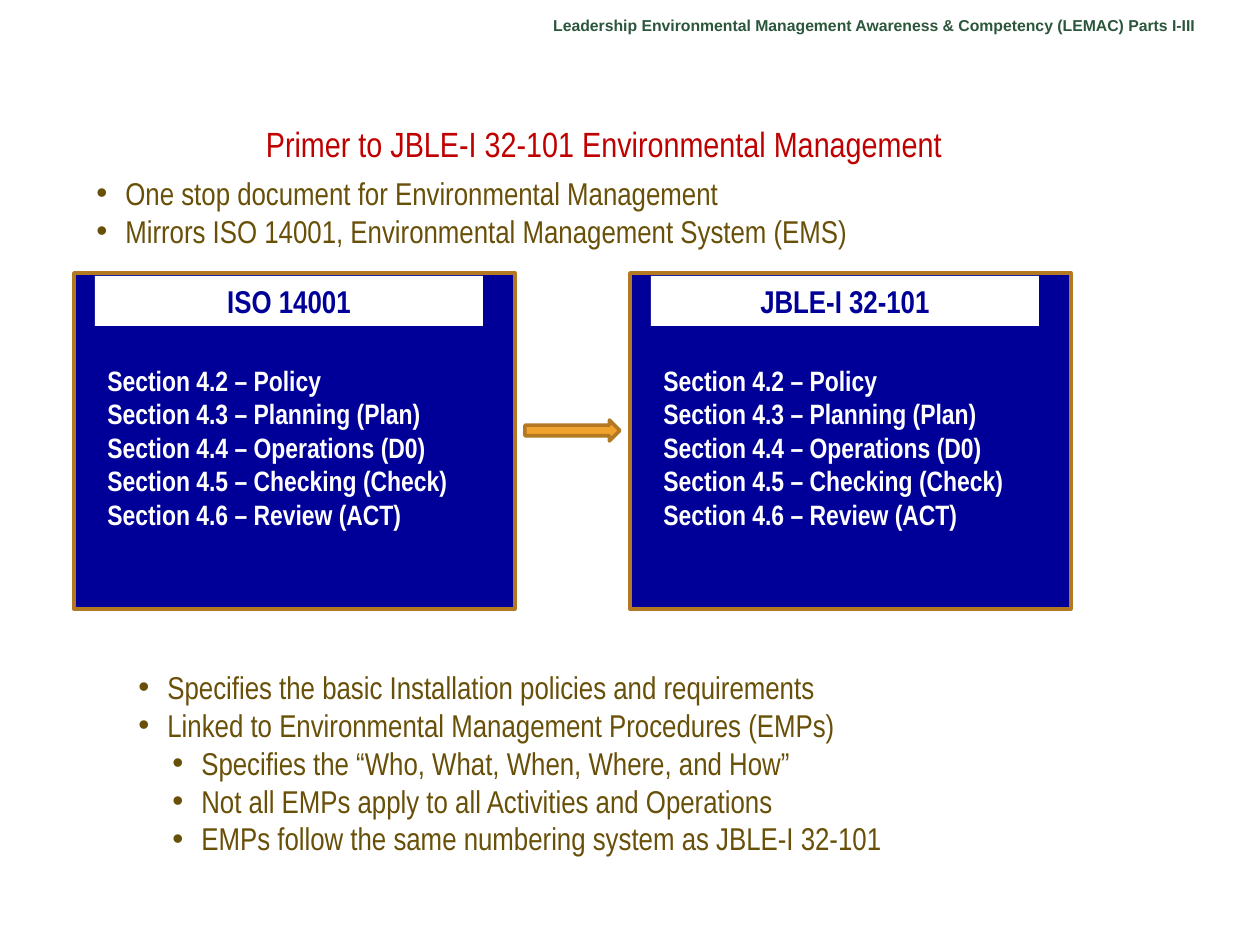
import pptx
import pptx.util
import pptx.dml.color
import pptx.enum.shapes
import pptx.enum.text
import pptx.oxml.ns
import lxml.etree

PX = 914400 / 126
COLORS = {
    "header": "2C563C",
    "title": "C00000",
    "bullet": "695008",
    "panel": "000099",
    "border": "B27822",
    "arrow": "F0A22E",
    "white": "FFFFFF",
}
SHAPES = pptx.enum.shapes.MSO_SHAPE
ALIGN = pptx.enum.text.PP_ALIGN

deck = pptx.Presentation()
deck.slide_width = round(1260 * PX)
deck.slide_height = round(945 * PX)
page = deck.slides.add_slide(deck.slide_layouts[6])


def add_shape(kind, place, fill, border=None):
    shape = page.shapes.add_shape(kind, *[round(v * PX) for v in place])
    shape.shadow.inherit = False
    shape.fill.solid()
    shape.fill.fore_color.rgb = pptx.dml.color.RGBColor.from_string(COLORS[fill])
    if border:
        shape.line.color.rgb = pptx.dml.color.RGBColor.from_string(COLORS[border])
        shape.line.width = pptx.util.Pt(2)
    else:
        shape.line.fill.background()
    return shape


def write(box, lines, size, color, bold=False, align=ALIGN.LEFT, margins=None, font="Arial Narrow"):
    frame = box.text_frame
    frame.word_wrap = True
    frame.vertical_anchor = pptx.enum.text.MSO_ANCHOR.TOP
    frame.text = "\n".join(lines)
    for index, para in enumerate(frame.paragraphs):
        para.alignment = align
        if margins:
            para.level = 1 if margins[index] > 29 else 0
            props = para._p.get_or_add_pPr()
            props.set("marL", str(round(margins[index] * PX)))
            props.set("indent", str(round(-29 * PX)))
            bullet_font = lxml.etree.SubElement(props, pptx.oxml.ns.qn("a:buFont"))
            bullet_font.set("typeface", "Arial")
            bullet = lxml.etree.SubElement(props, pptx.oxml.ns.qn("a:buChar"))
            bullet.set("char", "•")
        for span in para.runs:
            span.font.name = font
            span.font.size = pptx.util.Pt(size)
            span.font.bold = bold
            span.font.color.rgb = pptx.dml.color.RGBColor.from_string(COLORS[color])


header = page.shapes.add_textbox(*[round(v * PX) for v in (472, 10, 735, 32)])
write(header, ["Leadership Environmental Management Awareness & Competency (LEMAC) Parts I-III"],
      9, "header", True, ALIGN.RIGHT, font="Arial")

title = page.shapes.add_textbox(*[round(v * PX) for v in (105, 116, 998, 55)])
write(title, ["Primer to JBLE-I 32-101 Environmental Management"], 20, "title", align=ALIGN.CENTER)

intro = page.shapes.add_textbox(*[round(v * PX) for v in (84, 168, 1071, 89)])
write(intro, [
    "One stop document for Environmental Management",
    "Mirrors ISO 14001, Environmental Management System (EMS)",
], 18, "bullet", margins=[29, 29])

sections = [
    "Section 4.2 – Policy",
    "Section 4.3 – Planning (Plan)",
    "Section 4.4 – Operations (D0)",
    "Section 4.5 – Checking (Check)",
    "Section 4.6 – Review (ACT)",
]
for left, name in ((74, "ISO 14001"), (630, "JBLE-I 32-101")):
    add_shape(SHAPES.RECTANGLE, (left, 273, 441, 336), "panel", "border")
    label = add_shape(SHAPES.RECTANGLE, (left + 21, 276, 388, 50), "white")
    write(label, [name], 18, "panel", True, ALIGN.CENTER)
    section_box = page.shapes.add_textbox(*[round(v * PX) for v in (left + 21, 357, 410, 183)])
    write(section_box, sections, 16, "white", True)

add_shape(SHAPES.RIGHT_ARROW, (525, 420, 95, 21), "arrow", "border")

details = page.shapes.add_textbox(*[round(v * PX) for v in (126, 662, 1071, 204)])
write(details, [
    "Specifies the basic Installation policies and requirements",
    "Linked to Environmental Management Procedures (EMPs)",
    "Specifies the “Who, What, When, Where, and How”",
    "Not all EMPs apply to all Activities and Operations",
    "EMPs follow the same numbering system as JBLE-I 32-101",
], 18, "bullet", margins=[29, 29, 63, 63, 63])

deck.save("out.pptx")
